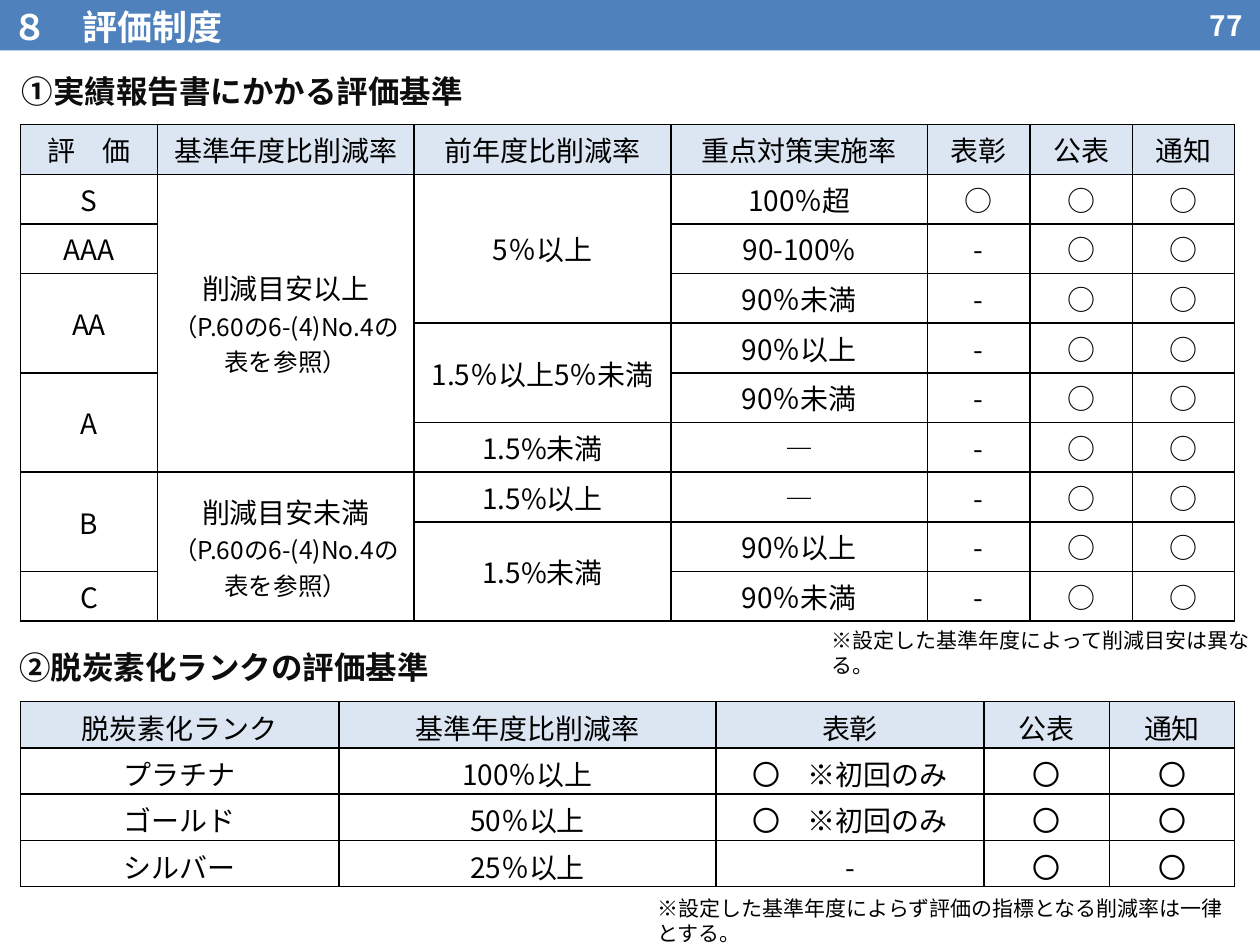
from lxml import etree
from pptx import Presentation
from pptx.dml.color import RGBColor
from pptx.enum.shapes import MSO_SHAPE as Shape
from pptx.enum.text import MSO_ANCHOR as Anchor, MSO_AUTO_SIZE as AutoSize, PP_ALIGN as Align
from pptx.oxml.ns import qn
from pptx.util import Pt

FONT = "Noto Sans CJK JP"
BLACK, WHITE, INK = "000000", "FFFFFF", "0D0D0D"
BLUE, PALE_BLUE = "4F81BD", "DCE6F2"


def color(code):
    return RGBColor.from_string(code)


def write(frame, text, sizes, code, bold=False, **para_format):
    """Write one paragraph per line of text, each with its own size."""
    for number, line in enumerate(text.split("\n")):
        para = frame.paragraphs[0] if number == 0 else frame.add_paragraph()
        for name, value in para_format.items():
            setattr(para, name, value)
        span = para.add_run()
        span.text = line
        span.font.color.rgb = color(code)
        for name, value in {"size": Pt(sizes[number]), "bold": bold, "name": FONT}.items():
            setattr(span.font, name, value)
        etree.SubElement(span.font._element, qn("a:ea"), typeface=FONT)


deck = Presentation()
deck.slide_width, deck.slide_height = Pt(720), Pt(540)
page = deck.slides.add_slide(deck.slide_layouts[5])

# Header band behind the title
band = page.shapes.add_shape(Shape.RECTANGLE, 0, 0, Pt(720), Pt(28.8))
band.shadow.inherit = False
band.fill.solid()
band.fill.fore_color.rgb = color(BLUE)
band.line.fill.background()
page.shapes._spTree.insert(2, band._element)

title = page.shapes.title
title_format = {"left": 0, "top": 0, "width": Pt(556), "height": Pt(27.4)}
for name, value in title_format.items():
    setattr(title, name, value)
frame_format = {"margin_left": Pt(7.2), "margin_right": Pt(7.2), "margin_top": Pt(2.9),
                "margin_bottom": 0, "vertical_anchor": Anchor.TOP,
                "auto_size": AutoSize.NONE, "word_wrap": True}
for name, value in frame_format.items():
    setattr(title.text_frame, name, value)
write(title.text_frame, "８　評価制度", [20], WHITE, True,
      alignment=Align.LEFT, line_spacing=Pt(24))

# Page number, headings and notes
labels = [
    ("77", (632.9, 1.4, 84.2, 25.9), 16, WHITE, True, Align.RIGHT, Anchor.MIDDLE),
    ("①実績報告書にかかる評価基準", (5.4, 37.4, 279.4, 28.8), 18, INK, True, Align.LEFT, Anchor.TOP),
    ("②脱炭素化ランクの評価基準", (4, 366.5, 279.4, 28.8), 18, INK, True, Align.LEFT, Anchor.TOP),
    ("※設定した基準年度によって削減目安は異なる。",
     (468, 355, 261.4, 21.6), 12, BLACK, False, Align.LEFT, Anchor.TOP),
    ("※設定した基準年度によらず評価の指標となる削減率は一律とする。",
     (368.6, 508.3, 337.7, 21.6), 12, BLACK, False, Align.LEFT, Anchor.TOP),
]
for text, place, size, code, bold, align, anchor in labels:
    box = page.shapes.add_textbox(*map(Pt, place))
    box.text_frame.word_wrap = True
    box.text_frame.vertical_anchor = anchor
    write(box.text_frame, text, [size], code, bold, alignment=align)

# Tables: None continues the cell above
REFERENCE = "\n（P.60の6-(4)No.4の表を参照）"
report_rows = [
    ["評　価", "基準年度比削減率", "前年度比削減率", "重点対策実施率", "表彰", "公表", "通知"],
    ["S", "削減目安以上" + REFERENCE, "5％以上", "100％超", "○"],
    ["AAA", None, None, "90-100%", "-"],
    ["AA", None, None, "90％未満", "-"],
    [None, None, "1.5％以上5％未満", "90％以上", "-"],
    ["A", None, None, "90％未満", "-"],
    [None, None, "1.5%未満", "―", "-"],
    ["B", "削減目安未満" + REFERENCE, "1.5%以上", "―", "-"],
    [None, None, "1.5%未満", "90％以上", "-"],
    ["C", None, None, "90％未満", "-"],
]
rank_rows = [
    ["脱炭素化ランク", "基準年度比削減率", "表彰", "公表", "通知"],
    ["プラチナ", "100％以上", "〇　※初回のみ"],
    ["ゴールド", "50％以上", "〇　※初回のみ"],
    ["シルバー", "25％以上", "-"],
]
tables = [
    (report_rows, "○", 71.2, 28.4, [78.3, 146.7, 146.7, 146.7, 58.5, 58.5, 58.5],
     {"margin_left": Pt(5), "margin_right": Pt(5), "margin_top": 0,
      "margin_bottom": 0, "vertical_anchor": Anchor.MIDDLE}),
    (rank_rows, "〇", 401, 26.4, [182, 215.5, 153, 71.7, 71.7],
     {"margin_top": Pt(3.2), "margin_bottom": 0, "vertical_anchor": Anchor.TOP}),
]
for rows, circle, top, row_height, widths, cell_format in tables:
    graphic = page.shapes.add_table(len(rows), len(widths), Pt(11.7), Pt(top),
                                    Pt(sum(widths)), Pt(row_height * len(rows)))
    table = graphic.table
    table.first_row = table.horz_banding = False
    for column, width in zip(table.columns, widths):
        column.width = Pt(width)
    for r, row in enumerate(rows):
        table.rows[r].height = Pt(row_height)
        # The last two columns, publication and notice, apply to every grade
        texts = row if r == 0 else row + [circle, circle]
        for c, text in enumerate(texts):
            cell = table.cell(r, c)
            for name, value in cell_format.items():
                setattr(cell, name, value)
            for side in ("a:lnL", "a:lnR", "a:lnT", "a:lnB"):
                border = etree.SubElement(cell._tc.get_or_add_tcPr(), qn(side), w=str(Pt(1)))
                paint = etree.SubElement(border, qn("a:solidFill"))
                etree.SubElement(paint, qn("a:srgbClr"), val=BLACK)
            if r == 0:
                cell.fill.solid()
                cell.fill.fore_color.rgb = color(PALE_BLUE)
            else:
                cell.fill.background()
            if text is None:
                continue
            write(cell.text_frame, text, [16, 14], BLACK, alignment=Align.CENTER)
            last = r
            while last + 1 < len(rows) and c < len(row) and rows[last + 1][c:c + 1] == [None]:
                last += 1
            if last > r:
                cell.merge(table.cell(last, c))

deck.save("out.pptx")
